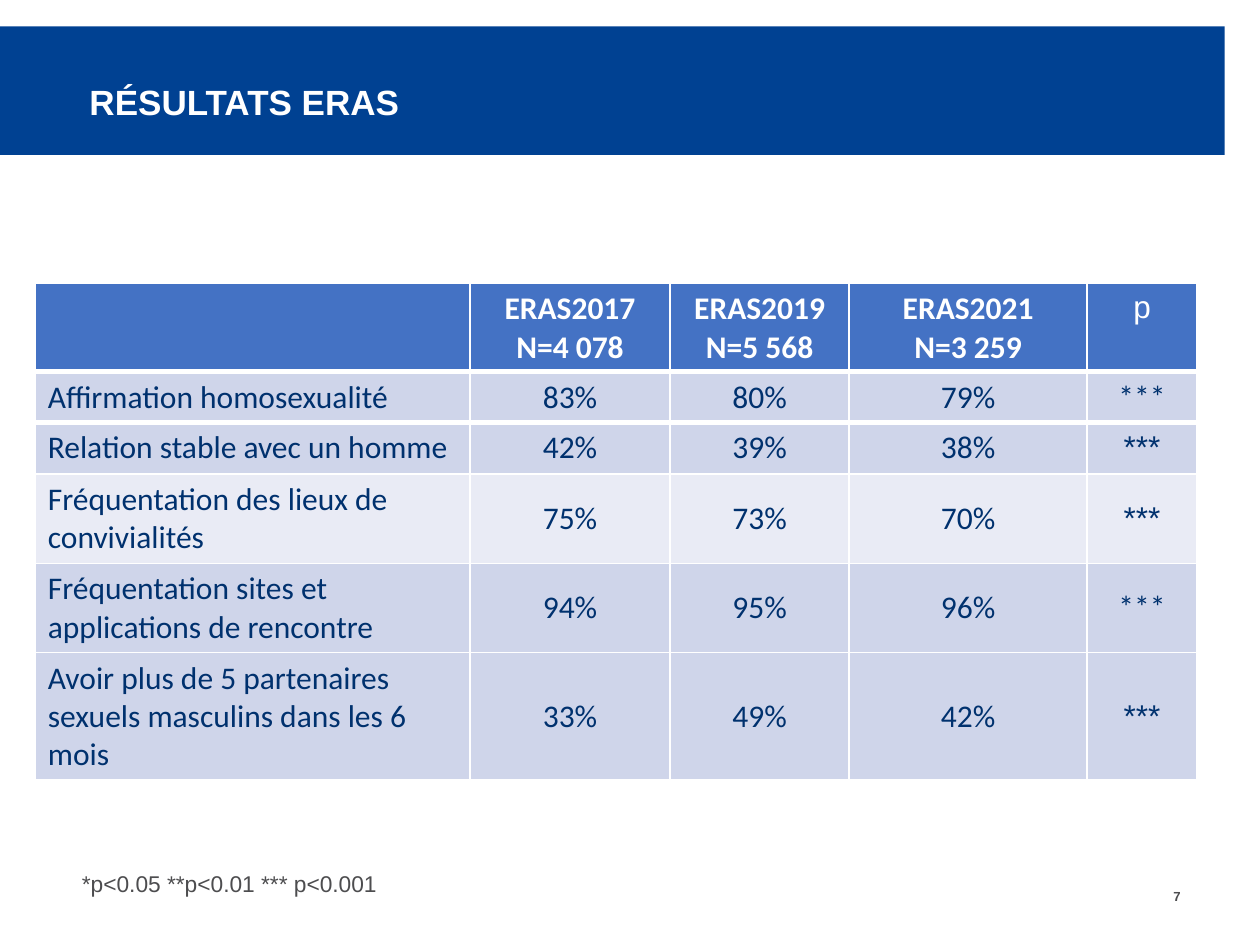
"""Build the ERAS results slide: title band, comparison table and significance key."""
from lxml import etree
from pptx import Presentation
from pptx.dml.color import RGBColor
from pptx.enum.shapes import MSO_SHAPE
from pptx.enum.text import MSO_ANCHOR, PP_ALIGN
from pptx.oxml.ns import qn
from pptx.util import Inches, Pt

RECTANGLE = MSO_SHAPE.RECTANGLE
TOP, MIDDLE = MSO_ANCHOR.TOP, MSO_ANCHOR.MIDDLE
LEFT, CENTER, RIGHT = PP_ALIGN.LEFT, PP_ALIGN.CENTER, PP_ALIGN.RIGHT
COLORS = {"band": "004192", "header": "4472C4", "row": "CFD5EA", "light row": "E9EBF5",
          "white": "FFFFFF", "navy": "00316E", "grey": "4D4D4F"}
WIDTH, HEIGHT = Inches(10), Inches(7.5)
BAND_TOP, BAND_HEIGHT = HEIGHT * 0.21 / 7.5, HEIGHT * 1.02 / 7.5


def write(frame, text, size, color, font="Arial", bold=False, align=LEFT):
    frame.text = text
    for para in frame.paragraphs:
        para.alignment = align
        for span in para.runs:
            span.font.size = Pt(size)
            span.font.name = font
            span.font.bold = bold
            span.font.color.rgb = RGBColor.from_string(COLORS[color])


def set_border(cell, side, points):
    line = etree.SubElement(cell._tc.get_or_add_tcPr(), qn(f"a:ln{side}"), w=str(Pt(points)))
    fill = etree.SubElement(line, qn("a:solidFill"))
    etree.SubElement(fill, qn("a:srgbClr"), val=COLORS["white"])


deck = Presentation()
deck.slide_width, deck.slide_height = WIDTH, HEIGHT
page = deck.slides.add_slide(deck.slide_layouts[6])

band = page.shapes.add_shape(RECTANGLE, 0, int(BAND_TOP), int(WIDTH * 0.972), int(BAND_HEIGHT))
band.shadow.inherit = False
band.fill.solid()
band.fill.fore_color.rgb = RGBColor.from_string(COLORS["band"])
band.line.fill.background()

labels = [
    ("7", 0.914, HEIGHT * 0.94, 0.027, HEIGHT * 0.02, 7.5, "grey", True, RIGHT, 0.04),
    ("RÉSULTATS ERAS", 0.059, BAND_TOP, 0.748, BAND_HEIGHT, 20, "white", True, LEFT, 0.12),
    ("*p<0.05 **p<0.01 *** p<0.001", 0.061, HEIGHT * 0.92, 0.268, HEIGHT * 0.03,
     13, "grey", False, LEFT, 0.04),
]
for text, left, top, width, height, size, color, bold, align, inset in labels:
    box = page.shapes.add_textbox(int(WIDTH * left), int(top), int(WIDTH * width), int(height))
    frame = box.text_frame
    frame.word_wrap = True
    frame.margin_left, frame.margin_right = Inches(inset), Inches(0.04)
    frame.margin_top = frame.margin_bottom = 0
    write(frame, text, size, color, bold=bold, align=align)
    if color == "white":
        frame.vertical_anchor = MIDDLE
        frame.paragraphs[0].line_spacing = 1.5

rows = [
    ("", "ERAS2017\nN=4 078", "ERAS2019\nN=5 568", "ERAS2021\nN=3 259", "p"),
    ("Affirmation homosexualité", "83%", "80%", "79%", "***"),
    ("Relation stable avec un homme", "42%", "39%", "38%", "***"),
    ("Fréquentation des lieux de convivialités", "75%", "73%", "70%", "***"),
    ("Fréquentation sites et applications de rencontre", "94%", "95%", "96%", "***"),
    ("Avoir plus de 5 partenaires sexuels masculins dans les 6 mois", "33%", "49%", "42%", "***"),
]
column_shares = [0.345, 0.159, 0.142, 0.189, 0.087]
row_heights = [0.7, 0.4, 0.41, 0.71, 0.71, 1.01]
row_fills = ["header", "row", "row", "light row", "row", "row"]
arial_p_rows = {0, 2, 3, 5}
thick_rules = {1, 2}

table = page.shapes.add_table(len(rows), len(column_shares), int(WIDTH * 0.028), int(HEIGHT * 0.3),
                              int(WIDTH * sum(column_shares)), Inches(sum(row_heights))).table
for column, share in zip(table.columns, column_shares):
    column.width = int(WIDTH * share)
for r, values in enumerate(rows):
    table.rows[r].height = Inches(row_heights[r])
    for c, value in enumerate(values):
        cell = table.cell(r, c)
        is_p = c == len(values) - 1
        write(cell.text_frame, value, 18, "navy" if r else "white",
              font="Arial" if is_p and r in arial_p_rows else "Calibri",
              bold=r == 0 and not is_p, align=CENTER if c else LEFT)
        cell.vertical_anchor = MIDDLE if r and c else TOP
        for side, rule in (("L", None), ("R", None), ("T", r), ("B", r + 1)):
            set_border(cell, side, 3 if rule in thick_rules else 1)
        cell.fill.solid()
        cell.fill.fore_color.rgb = RGBColor.from_string(COLORS[row_fills[r]])

deck.save("out.pptx")
